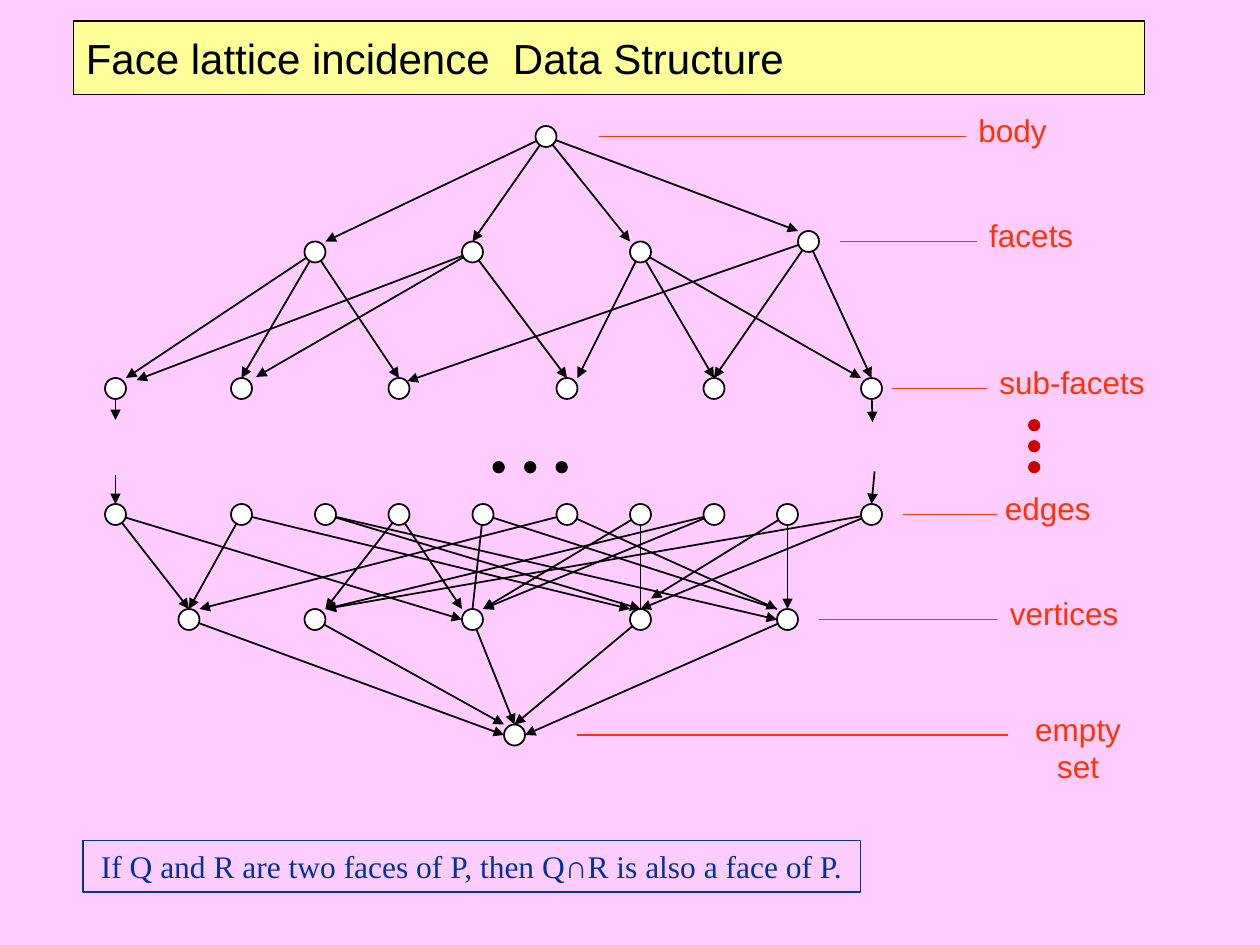
"""Build a slide showing the face lattice incidence data structure."""
from pptx import Presentation
from pptx.dml.color import RGBColor
from pptx.enum.shapes import MSO_CONNECTOR, MSO_SHAPE
from pptx.enum.text import MSO_ANCHOR, MSO_AUTO_SIZE, PP_ALIGN
from pptx.oxml.ns import qn
from pptx.util import Inches, Pt
from lxml.etree import SubElement

BLACK = RGBColor(0x00, 0x00, 0x00)
WHITE = RGBColor(0xFF, 0xFF, 0xFF)
PINK = RGBColor(0xFF, 0xCC, 0xFF)
YELLOW = RGBColor(0xFF, 0xFF, 0x99)
ORANGE = RGBColor(0xFF, 0x33, 0x00)
RED = RGBColor(0xCC, 0x00, 0x00)
BLUE = RGBColor(0x00, 0x33, 0x99)

CELLS_PER_INCH = 12
NODE_SIZE = 2
DOT_SIZE = 1
LABEL_RISE = 3

TITLE = "Face lattice incidence  Data Structure"
THEOREM = "If Q and R are two faces of P, then Q∩R is also a face of P."

# Each node is followed by the tips of its arrows.
LATTICE = [
    ((52, 13), [(31, 23), (45, 23), (60, 23), (76, 22)]),
    ((30, 24), [(12, 36), (23, 36), (38, 36)]),
    ((45, 24), [(13, 36.2), (24.4, 35.9), (54, 36)]),
    ((61, 24), [(55, 36), (68, 36), (82, 36)]),
    ((77, 23), [(83, 36), (68, 36), (38.8, 36.3)]),
    ((11, 37), [(11, 40)]),
    ((23, 37), []),
    ((38, 37), []),
    ((54, 37), []),
    ((68, 37), []),
    ((83, 37), [(83.1, 40.2)]),
    ((11, 49), [(18, 58), (44, 59)]),
    ((23, 49), [(18, 58), (60, 58)]),
    ((31, 49), [(61, 58), (74, 59)]),
    ((38, 49), [(31, 58), (44, 58)]),
    ((46, 49), []),
    ((54, 49), [(19, 58), (74, 58)]),
    ((61, 49), [(46, 58)]),
    ((68, 49), [(31, 58), (46, 58)]),
    ((75, 49), [(62, 57), (75, 58)]),
    ((83, 49), [(31, 58), (61, 58)]),
    ((18, 59), [(48, 70)]),
    ((30, 59), [(48, 69)]),
    ((45, 59), [(49, 69)]),
    ((61, 59), [(49, 69)]),
    ((75, 59), [(50, 70)]),
    ((49, 70), []),
]
PLAIN_EDGES = [((46, 49), (45, 58)), ((46, 49), (74, 58)), ((61, 49), (61, 58))]
RESUMING_ARROWS = [((11, 45.2), (11, 48)), ((83.3, 44.9), (83, 48))]
LEVELS = [
    ("body", 13, 57, 92, 92, 0.74),
    ("facets", 23, 80, 93, 93, 0.87),
    ("sub-facets", 37, 85, 94, 94, 1.35),
    ("edges", 49, 86, 95, 94.5, 0.88),
    ("vertices", 59, 78, 95, 95, 1.06),
    ("empty set", 70, 55, 96, 95, 1.28),
]
DOTS = [(BLACK, [(47.5 + 3 * step, 44.5) for step in range(3)]),
        (RED, [(98.5, 40.5 + 2 * step) for step in range(3)])]


def cells(count):
    return Inches(count / CELLS_PER_INCH)


def add_line(slide, start, end, color=BLACK, arrow=False):
    ends = [cells(value) for value in (*start, *end)]
    connector = slide.shapes.add_connector(MSO_CONNECTOR.STRAIGHT, *ends)
    connector.line.color.rgb = color
    connector.line.width = Pt(1)
    if arrow:
        SubElement(connector.line._get_or_add_ln(), qn("a:tailEnd"), type="triangle")
    SubElement(connector._element.spPr, qn("a:effectLst"))


def add_filled(slide, kind, box, fill, line, width=1):
    shape = slide.shapes.add_shape(kind, *box)
    shape.shadow.inherit = False
    if fill is None:
        shape.fill.background()
    else:
        shape.fill.solid()
        shape.fill.fore_color.rgb = fill
    shape.line.color.rgb = line
    shape.line.width = Pt(width)
    return shape


def add_circle(slide, center, size, fill, line):
    left, top = (cells(value - size / 2) for value in center)
    add_filled(slide, MSO_SHAPE.OVAL, (left, top, cells(size), cells(size)), fill, line)


def write(shape, text, size, font, color, align=PP_ALIGN.CENTER,
          anchor=MSO_ANCHOR.TOP, wrap=False):
    frame = shape.text_frame
    frame.word_wrap = wrap
    frame.auto_size = MSO_AUTO_SIZE.NONE if wrap else MSO_AUTO_SIZE.SHAPE_TO_FIT_TEXT
    frame.vertical_anchor = anchor
    paragraph = frame.paragraphs[0]
    paragraph.alignment = align
    run = paragraph.add_run()
    run.text = text
    run.font.size = Pt(size)
    run.font.name = font
    run.font.color.rgb = color


def main():
    presentation = Presentation()
    presentation.slide_width, presentation.slide_height = Inches(10), Inches(7.5)
    slide = presentation.slides.add_slide(presentation.slide_layouts[6])
    slide.background.fill.solid()
    slide.background.fill.fore_color.rgb = PINK

    for node, tips in LATTICE:
        for tip in tips:
            add_line(slide, node, tip, arrow=True)
    for start, end in PLAIN_EDGES:
        add_line(slide, start, end)
    for node, _ in LATTICE:
        add_circle(slide, node, NODE_SIZE, WHITE, BLACK)
    for start, end in RESUMING_ARROWS:
        add_line(slide, start, end, arrow=True)
    for color, centers in DOTS:
        for center in centers:
            add_circle(slide, center, DOT_SIZE, color, color)

    for name, row, start, end, left, width in LEVELS:
        add_line(slide, (start, row), (end, row), ORANGE)
        label = slide.shapes.add_textbox(
            cells(left), cells(row - LABEL_RISE), Inches(width), Inches(0.4))
        write(label, name, 18, "Arial", ORANGE)

    theorem_box = [Inches(value) for value in (0.66, 6.67, 6.17, 0.41)]
    theorem = add_filled(slide, MSO_SHAPE.RECTANGLE, theorem_box, None, BLUE)
    write(theorem, THEOREM, 18, "Times New Roman", BLUE)

    title_box = [cells(value) for value in (7, 2, 102, 7)]
    title = add_filled(slide, MSO_SHAPE.RECTANGLE, title_box, YELLOW, BLACK, 0.75)
    write(title, TITLE, 24, "Arial", BLACK, PP_ALIGN.LEFT, MSO_ANCHOR.MIDDLE, True)

    presentation.save("out.pptx")


if __name__ == "__main__":
    main()
